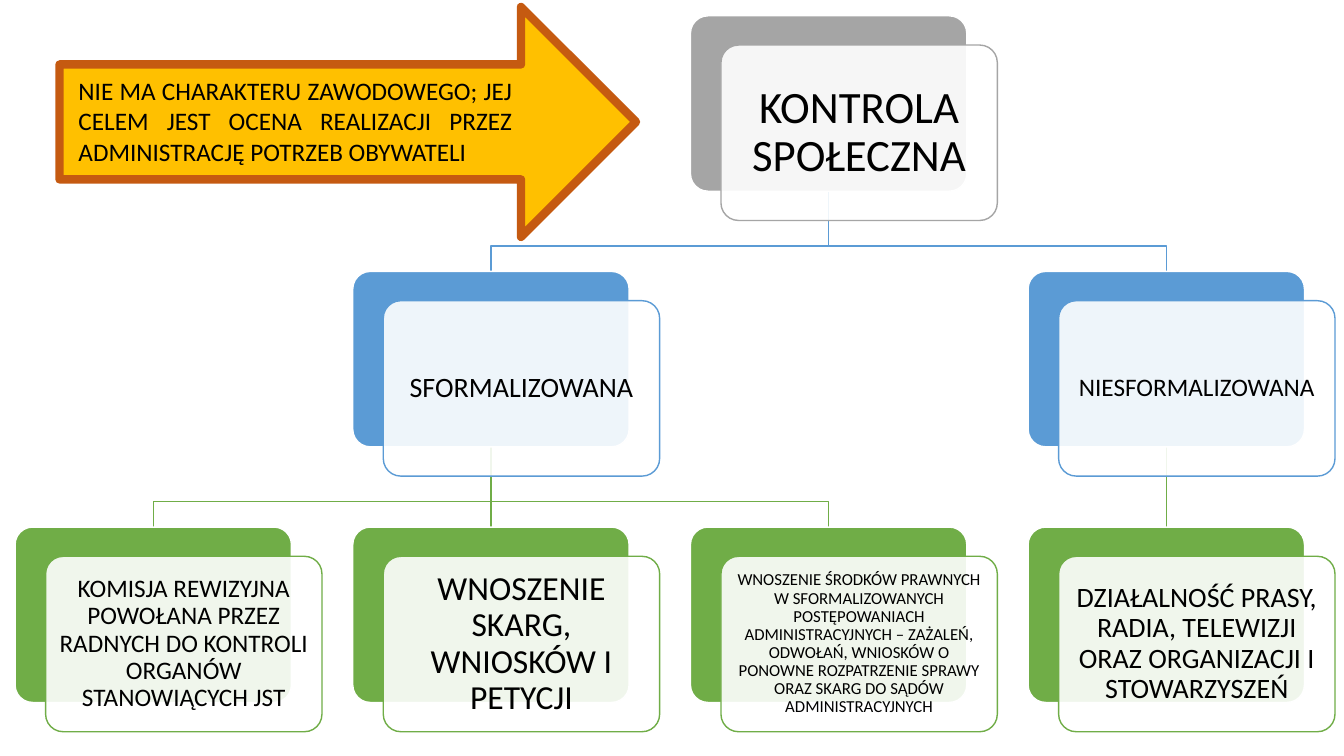
from pptx import Presentation
from pptx.dml.color import RGBColor
from pptx.enum.shapes import MSO_CONNECTOR, MSO_SHAPE
from pptx.enum.text import MSO_ANCHOR, PP_ALIGN
from pptx.oxml.ns import qn
from pptx.util import Pt
from lxml import etree

ROUNDED, ARROW = MSO_SHAPE.ROUNDED_RECTANGLE, MSO_SHAPE.RIGHT_ARROW
STRAIGHT = MSO_CONNECTOR.STRAIGHT
MIDDLE = MSO_ANCHOR.MIDDLE
CENTER, JUSTIFY = PP_ALIGN.CENTER, PP_ALIGN.JUSTIFY

FONT = "Calibri"
GREY, BLUE, GREEN = "A5A5A5", "5B9BD5", "70AD47"
WHITE, BLACK, GOLD, RUST = "FFFFFF", "000000", "FFC000", "C55A11"

CARD_WIDTH, CARD_HEIGHT = 197.4, 125.3
COLUMN_STEP, ROW_STEP = 241.2, 182.6
SHIFT_X, SHIFT_Y = 21.8, 20.9   # front card against back card
BEND = 18.2                     # height of the bend above the lower card

# name: (column, row, colour, text size, text, name of the card above)
CARDS = {
    "control": (2, 0, GREY, 32, "KONTROLA SPOŁECZNA", None),
    "formal": (1, 1, BLUE, 20, "SFORMALIZOWANA", "control"),
    "informal": (3, 1, BLUE, 18, "NIESFORMALIZOWANA", "control"),
    "committee": (0, 2, GREEN, 18, "KOMISJA REWIZYJNA POWOŁANA PRZEZ RADNYCH DO "
                  "KONTROLI ORGANÓW STANOWIĄCYCH JST", "formal"),
    "complaints": (1, 2, GREEN, 24, "WNOSZENIE SKARG, WNIOSKÓW I PETYCJI", "formal"),
    "remedies": (2, 2, GREEN, 12, "WNOSZENIE ŚRODKÓW PRAWNYCH W SFORMALIZOWANYCH "
                 "POSTĘPOWANIACH ADMINISTRACYJNYCH – ZAŻALEŃ, ODWOŁAŃ, WNIOSKÓW O "
                 "PONOWNE ROZPATRZENIE SPRAWY ORAZ SKARG DO SĄDÓW "
                 "ADMINISTRACYJNYCH", "formal"),
    "media": (3, 2, GREEN, 20, "DZIAŁALNOŚĆ PRASY, RADIA, TELEWIZJI ORAZ "
              "ORGANIZACJI I STOWARZYSZEŃ", "informal"),
}


def color(value):
    return RGBColor.from_string(value)


def add_box(page, kind, left, top, width, height, fill, line, weight=1):
    box = page.shapes.add_shape(kind, Pt(left), Pt(top), Pt(width), Pt(height))
    box.shadow.inherit = False
    box.fill.solid()
    box.fill.fore_color.rgb = color(fill)
    box.line.color.rgb = color(line)
    box.line.width = Pt(weight)
    return box


def write(box, text, size, alignment):
    box.text_frame.word_wrap = True
    para = box.text_frame.paragraphs[0]
    para.text = text
    para.alignment = alignment
    para.font.name = FONT
    para.font.size = Pt(size)
    para.font.color.rgb = color(BLACK)
    return para


def add_card(page, left, top, shade, size, text):
    """Place a coloured back card and a translucent front card; return the back."""
    back = add_box(page, ROUNDED, left, top, CARD_WIDTH, CARD_HEIGHT, shade, WHITE)
    front = add_box(page, ROUNDED, left + SHIFT_X, top + SHIFT_Y,
                    CARD_WIDTH, CARD_HEIGHT, WHITE, shade)
    for card in (back, front):
        card.adjustments[0] = 0.1
    fill_color = front.fill._xPr.find(qn("a:solidFill"))[0]
    etree.SubElement(fill_color, qn("a:alpha"), val="90000")

    # The margin grows with the text size
    frame = front.text_frame
    frame.margin_left = frame.margin_right = Pt(0.3 * size)
    frame.margin_top = frame.margin_bottom = Pt(0.3 * size)
    frame.vertical_anchor = MIDDLE
    write(front, text, size, CENTER).line_spacing = 0.9
    return back


def link(page, parent, child, shade):
    """Draw a straight or stepped line from parent to child, behind the cards."""
    start_x, start_y = parent.left + parent.width // 2, parent.top + parent.height
    end_x, end_y = child.left + child.width // 2, child.top
    if start_x == end_x:
        line = page.shapes.add_connector(STRAIGHT, start_x, start_y, end_x, end_y)
        line.begin_connect(parent, 2)
        line.end_connect(child, 0)
        etree.SubElement(line._element.spPr, qn("a:effectLst"))
    else:
        bend_y = end_y - Pt(BEND)
        outline = page.shapes.build_freeform(start_x, start_y)
        outline.add_line_segments(
            [(start_x, bend_y), (end_x, bend_y), (end_x, end_y)], close=False)
        line = outline.convert_to_shape()
        line.fill.background()
        line.shadow.inherit = False
    line.line.color.rgb = color(shade)
    line.line.width = Pt(1)
    page.shapes._spTree.insert(2, line._element)


def add_tree(page, left, top):
    backs = {}
    for name, (column, row, shade, size, text, parent) in CARDS.items():
        backs[name] = add_card(page, left + column * COLUMN_STEP,
                               top + row * ROW_STEP, shade, size, text)
        if parent:
            link(page, backs[parent], backs[name], shade)


def add_arrow_note(page, left, top, width, height):
    add_box(page, ARROW, left, top, width, height, GOLD, RUST, 6)
    note = page.shapes.add_textbox(Pt(left + 6.5), Pt(top + 45.4), Pt(324), Pt(72.7))
    write(note, "NIE MA CHARAKTERU ZAWODOWEGO; JEJ CELEM JEST OCENA REALIZACJI "
          "PRZEZ ADMINISTRACJĘ POTRZEB OBYWATELI", 18, JUSTIFY)


def main():
    deck = Presentation()
    deck.slide_width, deck.slide_height = Pt(960), Pt(540)
    page = deck.slides.add_slide(deck.slide_layouts[6])
    add_tree(page, 10.8, 11.3)
    add_arrow_note(page, 42.5, 5, 411.8, 164.2)
    deck.save("out.pptx")


if __name__ == "__main__":
    main()
